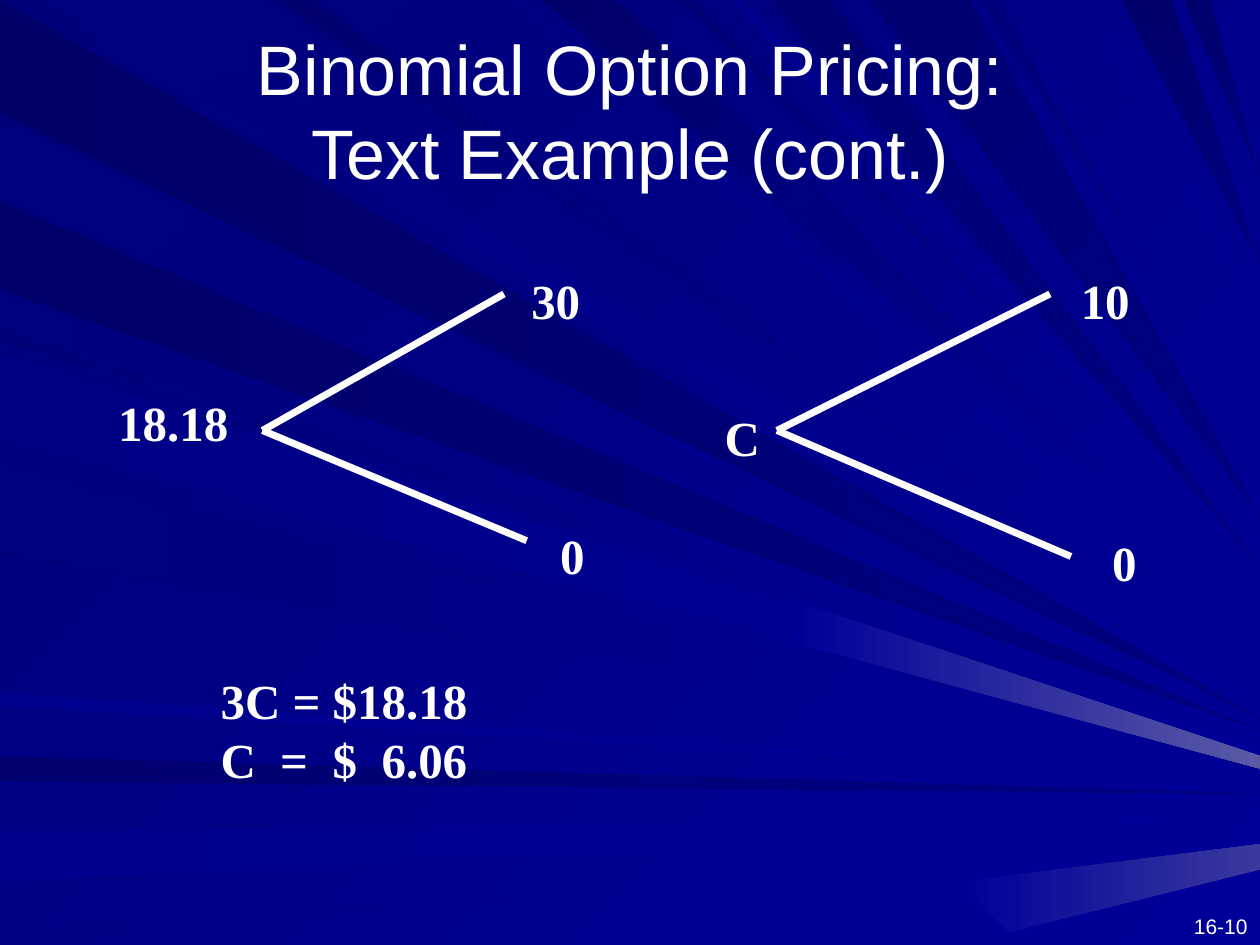
from lxml import etree
from pptx import Presentation
from pptx import util as u
from pptx.dml.color import RGBColor
from pptx.enum import shapes, text
from pptx.oxml import ns

WHITE, NAVY, BLUE = "FFFFFF", "000080", "000099"
RAY_UNIT = u.Pt(7.2)  # the page is 100 by 75 of these units

# Rays: start and end on the near edge, height of the tip on the right edge
LEFT_RAYS = [
    (0.2, 9.3, 57, "000069", NAVY),
    (59.6, 62.3, 63.2, "000071", NAVY),
    (66.5, 70.4, 64.7, "00008C", BLUE),
    (73.5, 75, 66.2, "000085", BLUE),
    (25.8, 27, 58.9, "000076", BLUE),
    (15.9, 22.8, 58.5, "00006B", NAVY),
    (27.8, 34.2, 59.9, "00007E", BLUE),
    (37.4, 43.7, 60.6, "00007B", BLUE),
    (55.2, 56, 62.2, "00008E", BLUE),
    (28.3, 34.7, 60.4, "000085", BLUE),
]
TOP_RAYS = [
    (2.6, 10.1, 56.3, "00007B", BLUE),
    (39.8, 41.6, 51.8, "000083", BLUE),
    (42.6, 49.2, 49.3, "00006D", BLUE),
    (54, 55.2, 46.3, "000073", BLUE),
    (60.6, 66.1, 44.6, "000073", NAVY),
    (88.7, 93, 21, "00006B", NAVY),
    (93.9, 96.4, 14, "00006D", NAVY),
    (22.5, 24.7, 55, "000070", BLUE),
    (57.7, 58.8, 45.4, "00008E", BLUE),
    (68.6, 77, 40.9, "000073", NAVY),
    (78.5, 79.2, 35.7, "000078", BLUE),
    (81.5, 82.4, 33.6, "000085", BLUE),
    (86.5, 87.2, 25.4, "00008A", BLUE),
]
GLOWS = [
    ("39399E", [(100, 69.4), (100, 67.2), (75.6, 70.2), (80, 73.7)]),
    ("5A5AA6", [(100, 60.1), (63.7, 48.5), (63.3, 51.1), (100, 60.6)]),
]


def colour(value):
    return RGBColor.from_string(value)


def paint(fill, first, last, angle):
    """Fill with a gradient at a clockwise angle."""
    fill.gradient()
    fill.gradient_angle = (360 - angle) % 360
    for stop, value in zip(fill.gradient_stops, (first, last)):
        stop.color.rgb = colour(value)


def write(para, content, *, font="Times New Roman", size=28, bold=True,
          align=text.PP_ALIGN.LEFT, tabs=()):
    """Put formatted text in a paragraph; a line feed makes a line break."""
    if tabs:
        tab_list = etree.SubElement(para._p.get_or_add_pPr(), ns.qn("a:tabLst"))
        for stop in tabs:
            etree.SubElement(tab_list, ns.qn("a:tab"), pos=str(u.Pt(stop)), algn="l")
    para.alignment = align
    para.line_spacing = u.Pt(1.2 * size)
    for index, line in enumerate(content.split("\n")):
        if index:
            para.add_line_break()
        span = para.add_run()
        span.text = line
        span.font.name = font
        span.font.size = u.Pt(size)
        span.font.bold = bold
        span.font.color.rgb = colour(WHITE)


class Painter:
    def __init__(self, page, line_colour=WHITE, line_width=4):
        self.page = page
        self.line_colour = line_colour
        self.line_width = line_width

    def ray(self, outline, first, last, angle=0):
        builder = self.page.shapes.build_freeform(*outline[0], scale=RAY_UNIT)
        builder.add_line_segments(outline[1:], close=True)
        shape = builder.convert_to_shape()
        shape.shadow.inherit = False
        shape.line.fill.background()
        paint(shape.fill, first, last, angle)

    def label(self, content, left, top, width, height=40, wrap=False,
              anchor=text.MSO_ANCHOR.TOP, **style):
        box = self.page.shapes.add_textbox(*map(u.Pt, (left, top, width, height)))
        frame = box.text_frame
        frame.word_wrap = wrap
        frame.vertical_anchor = anchor
        write(frame.paragraphs[0], content, **style)
        return frame

    def branch(self, start, end):
        line = self.page.shapes.add_connector(
            shapes.MSO_CONNECTOR.STRAIGHT, *map(u.Pt, start + end))
        line.line.color.rgb = colour(self.line_colour)
        line.line.width = u.Pt(self.line_width)
        etree.SubElement(line._element.spPr, ns.qn("a:effectLst"))

    def tree(self, root, ends, labels):
        for end in ends:
            self.branch(root, end)
        for label in labels:
            self.label(*label)


def main():
    deck = Presentation()
    deck.slide_width, deck.slide_height = u.Pt(720), u.Pt(540)
    page = deck.slides.add_slide(deck.slide_layouts[6])
    painter = Painter(page)

    # Background
    paint(page.background.fill, "000078", BLUE, 45)
    for start, end, tip, first, last in LEFT_RAYS:
        painter.ray([(0, start), (0, end), (100, tip)], first, last)
    for start, end, tip, first, last in TOP_RAYS:
        painter.ray([(start, 0), (end, 0), (100, tip)], first, last, 45)
    for glow, outline in GLOWS:
        painter.ray(outline, BLUE, glow)

    # Title and page number
    painter.label("Binomial Option Pricing:\nText Example (cont.)", 0, 24, 720, 90,
                  wrap=True, anchor=text.MSO_ANCHOR.BOTTOM, font="Arial", size=40,
                  bold=False, align=text.PP_ALIGN.CENTER)
    painter.label("16-10", 642, 518.5, 78, 21.5, wrap=True, font="Arial", size=12,
                  bold=False, align=text.PP_ALIGN.RIGHT)

    # Stock value and call value trees
    painter.tree((150, 246), [(288, 168), (301, 309)],
                 [("18.18", 60.5, 221, 94), ("30", 296.5, 151, 42.5),
                  ("0", 313, 296.5, 28)])
    painter.tree((444, 246), [(600, 168), (612, 318)],
                 [("C", 407, 229.5, 34.5), ("10", 610.5, 151, 42.5),
                  ("0", 628.5, 301, 28)])

    # Call price
    result = painter.label("3C = $18.18", 119, 379.5, 155.5, 74)
    write(result.add_paragraph(), "C\t=\t$\t6.06", tabs=(34, 64, 92))

    deck.save("out.pptx")


if __name__ == "__main__":
    main()
